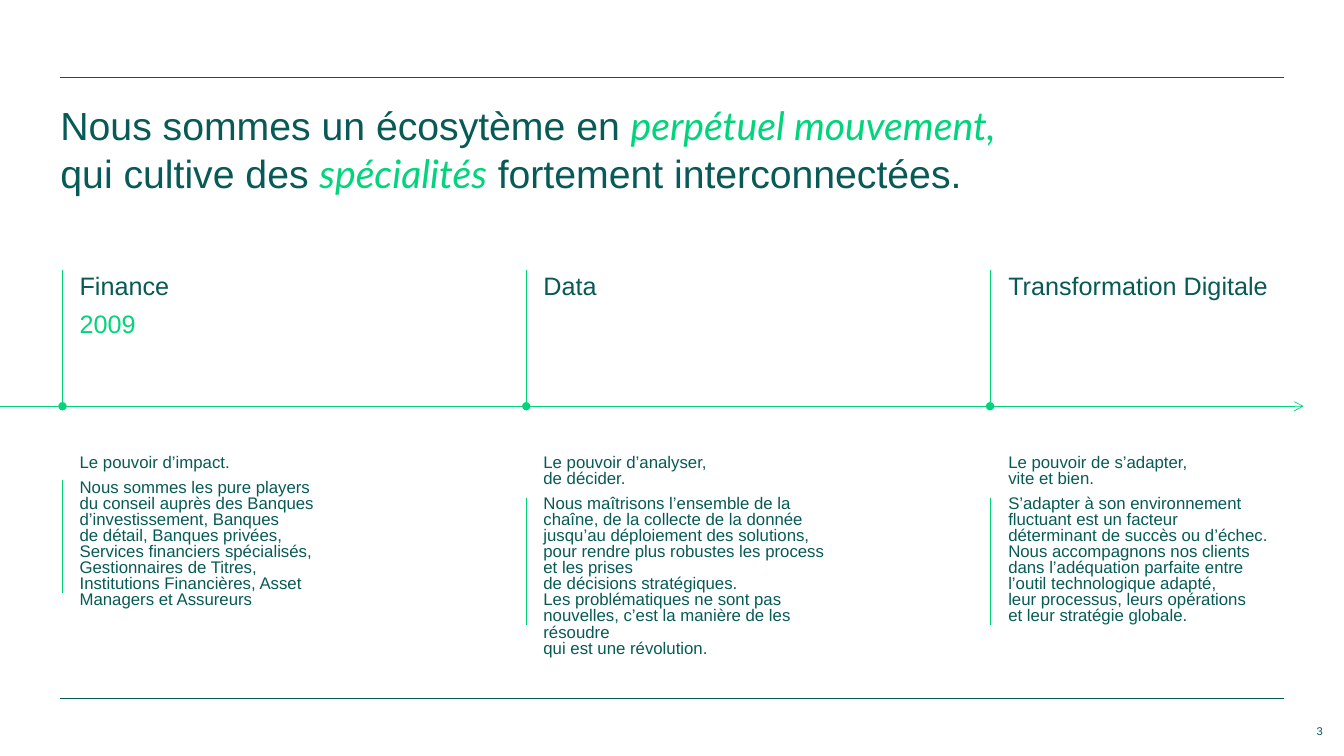
from copy import deepcopy

from pptx import Presentation
from pptx.dml.color import RGBColor
from pptx.enum.shapes import MSO_CONNECTOR as Connector
from pptx.enum.text import MSO_AUTO_SIZE as AutoSize, PP_ALIGN as Align
from pptx.oxml.ns import qn
from pptx.util import Inches, Pt
from lxml import etree

DARK = RGBColor(0x07, 0x5A, 0x56)
GREEN = RGBColor(0x00, 0xD5, 0x7C)

deck = Presentation()
deck.slide_width, deck.slide_height = Inches(13.33), Inches(7.5)
page = deck.slides.add_slide(deck.slide_layouts[6])


def add_text(place, paragraphs, size, align=Align.LEFT, wrap=True, spacing=None, after=0):
    """Each paragraph is a list of (text, format) pairs; a newline is a line break."""
    box = page.shapes.add_textbox(*[Inches(length) for length in place])
    frame = box.text_frame
    frame.margin_left = frame.margin_right = frame.margin_top = frame.margin_bottom = 0
    frame.word_wrap = wrap
    frame.auto_size = AutoSize.NONE if wrap else AutoSize.SHAPE_TO_FIT_TEXT
    for index, pieces in enumerate(paragraphs):
        para = frame.paragraphs[0] if index == 0 else frame.add_paragraph()
        para.alignment = align
        para.space_after = Pt(after)
        if spacing:
            para.line_spacing = spacing
        for text, style in pieces:
            for number, line in enumerate(text.split("\n")):
                if number:
                    para.add_line_break()
                    line_break = para._p[-1]
                span = para.add_run()
                span.text = line
                span.font.size = Pt(style.get("size", size))
                span.font.name = style.get("font", "Arial")
                span.font.italic = style.get("italic", False)
                span.font.color.rgb = style.get("color", DARK)
                if number:  # the break takes the size of its line
                    line_break.append(deepcopy(span._r.rPr))


def add_line(x1, y1, x2, y2, color=GREEN, width=0.25, tail=None):
    line = page.shapes.add_connector(
        Connector.STRAIGHT, Inches(x1), Inches(y1), Inches(x2), Inches(y2))
    line.line.color.rgb = color
    line.line.width = Pt(width)
    if tail:
        etree.SubElement(line.line._get_or_add_ln(), qn("a:tailEnd"), type=tail)
    etree.SubElement(line._element.spPr, qn("a:effectLst"))


# Rules and title
add_line(0.6, 0.77, 12.73, 0.77, color=DARK)
add_line(0.6, 6.93, 12.73, 6.93, color=DARK, width=0.82)
accent = {"font": "Lato", "italic": True, "color": GREEN}
add_text((0.6, 1.01, 12.13, 1.43), [[
    ("Nous sommes un écosytème en ", {}),
    ("perpétuel mouvement,", accent),
    ("\nqui cultive des ", {}),
    ("spécialités", accent),
    (" fortement interconnectées.", {}),
]], 28)

# Timeline arrow
TIMELINE_Y = 4.03
add_line(0, TIMELINE_Y, 12.93, TIMELINE_Y, width=0.5, tail="arrow")

# Specialities: marker x, text x, width, side line top and bottom, heading, promise, details
specialities = [
    (0.62, 0.79, 2.56, 4.76, 5.88,
     [[("Finance", {})], [("2009", {"color": GREEN})]],
     "Le pouvoir d’impact.",
     [("Nous sommes les pure players\ndu conseil auprès des Banques d’investissement, Banques\n"
       "de détail, Banques privées, Services financiers spécialisés, Gestionnaires de Titres, "
       "Institutions Financières, Asset Managers et Assureurs", {}), (".", {"size": 3})]),
    (5.22, 5.39, 2.96, 4.94, 6.2,
     [[("Data", {})]],
     "Le pouvoir d’analyser,\nde décider.",
     [("Nous maîtrisons l’ensemble de la chaîne, de la collecte de la donnée jusqu’au "
       "déploiement des solutions, pour rendre plus robustes les process et les prises\n"
       "de décisions stratégiques.\nLes problématiques ne sont pas nouvelles, c’est la "
       "manière de les résoudre\nqui est une révolution.", {})]),
    (9.82, 10, 2.59, 4.94, 6.2,
     [[("Transformation Digitale", {})]],
     "Le pouvoir de s’adapter,\nvite et bien.",
     [("S’adapter à son environnement fluctuant est un facteur déterminant de succès ou "
       "d’échec.\nNous accompagnons nos clients dans l’adéquation parfaite entre l’outil "
       "technologique adapté,\nleur processus, leurs opérations\net leur stratégie globale.", {})]),
]
for marker_x, text_x, width, top, bottom, heading, promise, details in specialities:
    add_line(marker_x, 2.68, marker_x, TIMELINE_Y, tail="oval")
    add_line(marker_x, top, marker_x, bottom)
    add_text((text_x, 2.68, width, 0.8), heading, 18, after=6)
    add_text((text_x, 4.52, width, 2.12), [[(promise, {})], details], 12, spacing=0.8, after=6)

# Page number
add_text((12.93, 7.19, 0.19, 0.13), [[("3", {})]], 8, align=Align.RIGHT, wrap=False)

deck.save("out.pptx")
